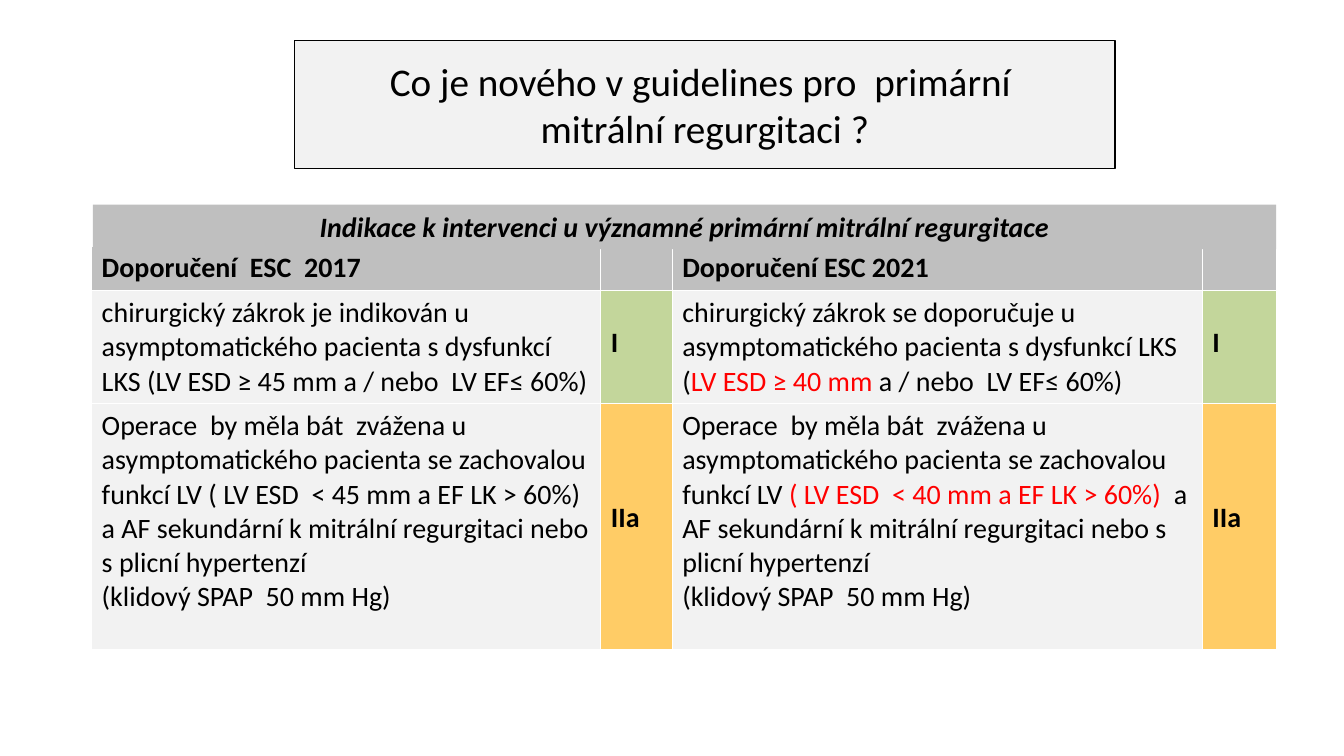
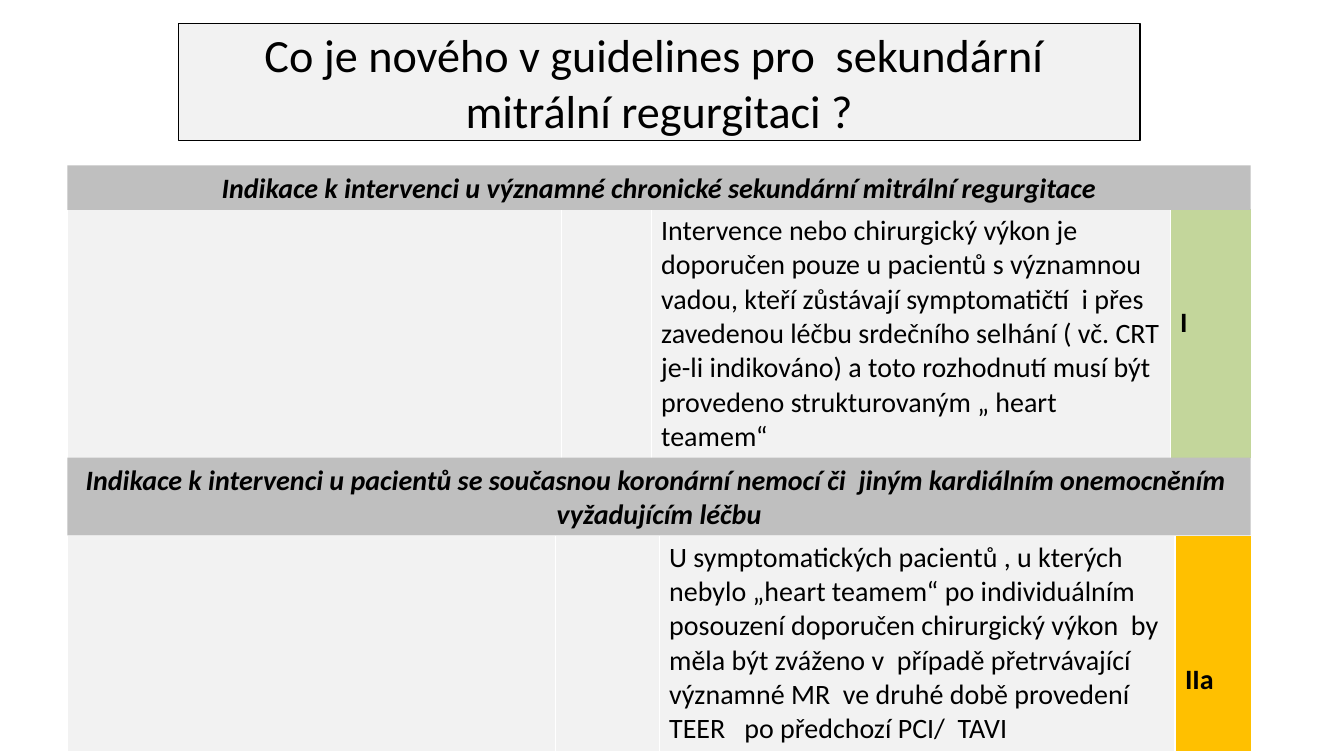
import pptx
import pptx.util
import pptx.dml.color
import pptx.enum.text

Cm = pptx.util.Cm
Pt = pptx.util.Pt
RGBColor = pptx.dml.color.RGBColor

BLACK = RGBColor(0x00, 0x00, 0x00)
RED = RGBColor(0xFF, 0x00, 0x00)
PALE_GREY = RGBColor(0xF2, 0xF2, 0xF2)
BAND_GREY = RGBColor(0xBF, 0xBF, 0xBF)
GREEN = RGBColor(0xC3, 0xD6, 0x9B)
SAND = RGBColor(0xFF, 0xCC, 0x66)
AMBER = RGBColor(0xFF, 0xC0, 0x00)
FONT = "Calibri"
BODY_SIZE = 20
CELL_MARGIN = 0.13
GRADE_STEP = 0.77
TITLE_ONLY_LAYOUT = 5
RED_MARK = "|"


def format_font(font, size=BODY_SIZE, bold=False, italic=False, color=BLACK):
    font.name = FONT
    font.size = Pt(size)
    font.bold = bold
    font.italic = italic
    font.color.rgb = color


def fill_cell(cell, text, fill, bold, steps_down):
    cell.fill.solid()
    cell.fill.fore_color.rgb = fill
    cell.margin_top = Cm(CELL_MARGIN + GRADE_STEP * steps_down)
    for index, line in enumerate(text.split("\n")):
        paragraph = cell.text_frame.add_paragraph() if index else cell.text_frame.paragraphs[0]
        format_font(paragraph.font, bold=bold)
        for part_index, part in enumerate(line.split(RED_MARK)):
            if part:
                run = paragraph.add_run()
                run.text = part
                format_font(run.font, bold=bold, color=RED if part_index % 2 else BLACK)


SLIDES = [
    {
        "title": "Co je nového v guidelines pro  primární \vmitrální regurgitaci ?",
        "title_box": (7.42, 1.02, 20.68, 3.23),
        "title_size": 28,
        "tables": [
            {
                "position": (2.31, 6.2),
                "columns": (12.83, 1.8, 13.36, 1.88),
                "rows": [
                    (1.09, BAND_GREY, BAND_GREY, 0,
                     ("Doporučení  ESC  2017", "", "Doporučení ESC 2021", "")),
                    (2.84, PALE_GREY, GREEN, 1,
                     ("chirurgický zákrok je indikován u asymptomatického pacienta s dysfunkcí "
                      "LKS (LV ESD ≥ 45 mm a / nebo  LV EF≤ 60%)",
                      "I",
                      "chirurgický zákrok se doporučuje u asymptomatického pacienta s dysfunkcí "
                      "LKS  (|LV ESD ≥ 40 mm |a / nebo  LV EF≤ 60%)",
                      "I")),
                    (6.2, PALE_GREY, SAND, 3,
                     ("Operace  by měla bát  zvážena u asymptomatického pacienta se zachovalou "
                      "funkcí LV ( LV ESD  < 45 mm a EF LK > 60%)  a AF sekundární k mitrální "
                      "regurgitaci nebo s plicní hypertenzí\n(klidový SPAP  50 mm Hg)",
                      "IIa",
                      "Operace  by měla bát  zvážena u asymptomatického pacienta se zachovalou "
                      "funkcí LV |( LV ESD  < 40 mm a EF LK > 60%)  |a AF sekundární k mitrální "
                      "regurgitaci nebo s plicní hypertenzí\n(klidový SPAP  50 mm Hg)",
                      "IIa")),
                ],
            },
        ],
        "bands": [
            ((2.34, 5.16, 29.82, 1.12),
             "Indikace k intervenci u významné primární mitrální regurgitace"),
        ],
    },
    {
        "title": "Co je nového v guidelines pro  sekundární \vmitrální regurgitaci ?",
        "title_box": (4.5, 0.58, 24.23, 2.97),
        "title_size": 33,
        "tables": [
            {
                "position": (1.7, 5.26),
                "columns": (12.45, 2.26, 13.08, 2.06),
                "rows": [
                    (6.27, PALE_GREY, GREEN, 3,
                     ("", "",
                      "Intervence nebo chirurgický výkon je  doporučen pouze u pacientů s "
                      "významnou vadou, kteří zůstávají symptomatičtí  i přes zavedenou léčbu "
                      "srdečního selhání ( vč. CRT je-li indikováno) a toto rozhodnutí musí být "
                      "provedeno strukturovaným „ heart teamem“",
                      "I")),
                ],
            },
            {
                "position": (1.7, 13.49),
                "columns": (12.29, 2.62, 13, 1.93),
                "rows": [
                    (5.4, PALE_GREY, AMBER, 4,
                     ("", "",
                      "U symptomatických pacientů , u kterých nebylo „heart teamem“ po "
                      "individuálním posouzení doporučen chirurgický výkon  by měla být zváženo "
                      "v  případě přetrvávající  významné MR  ve druhé době provedení TEER   po "
                      "předchozí PCI/  TAVI",
                      "IIa")),
                ],
            },
        ],
        "bands": [
            ((1.7, 4.17, 29.82, 1.12),
             "Indikace k intervenci u významné chronické sekundární mitrální regurgitace"),
            ((1.7, 11.53, 29.82, 1.96),
             "Indikace k intervenci u pacientů se současnou koronární nemocí či  jiným "
             "kardiálním onemocněním  vyžadujícím léčbu"),
        ],
    },
]

presentation = pptx.Presentation()
presentation.slide_width = Cm(33.87)
presentation.slide_height = Cm(19.05)

for content in SLIDES:
    slide = presentation.slides.add_slide(presentation.slide_layouts[TITLE_ONLY_LAYOUT])

    title = slide.shapes.title
    title.left, title.top, title.width, title.height = map(Cm, content["title_box"])
    title.fill.solid()
    title.fill.fore_color.rgb = PALE_GREY
    title.line.color.rgb = BLACK
    title.line.width = Pt(0.75)
    title.text_frame.text = content["title"]
    title.text_frame.auto_size = pptx.enum.text.MSO_AUTO_SIZE.NONE
    title.text_frame.vertical_anchor = pptx.enum.text.MSO_ANCHOR.MIDDLE
    paragraph = title.text_frame.paragraphs[0]
    paragraph.alignment = pptx.enum.text.PP_ALIGN.CENTER
    for run in paragraph.runs:
        format_font(run.font, size=content["title_size"])

    for block in content["tables"]:
        rows, columns = block["rows"], block["columns"]
        left, top = block["position"]
        height = sum(row[0] for row in rows)
        table = slide.shapes.add_table(
            len(rows), len(columns), Cm(left), Cm(top), Cm(sum(columns)), Cm(height)
        ).table
        table.horz_banding = False
        for column, width in zip(table.columns, columns):
            column.width = Cm(width)
        for row, (row_height, text_fill, grade_fill, steps_down, texts) in zip(table.rows, rows):
            row.height = Cm(row_height)
            for index, (cell, text) in enumerate(zip(row.cells, texts)):
                is_grade = index % 2 == 1 and text != ""
                is_header = text_fill == BAND_GREY
                fill_cell(cell, text, grade_fill if is_grade else text_fill,
                          is_grade or is_header, steps_down if is_grade else 0)

    for box, text in content["bands"]:
        band = slide.shapes.add_textbox(*map(Cm, box))
        band.fill.solid()
        band.fill.fore_color.rgb = BAND_GREY
        band.text_frame.word_wrap = True
        band.text_frame.text = text
        paragraph = band.text_frame.paragraphs[0]
        paragraph.alignment = pptx.enum.text.PP_ALIGN.CENTER
        format_font(paragraph.runs[0].font, bold=True, italic=True)

presentation.save("out.pptx")
